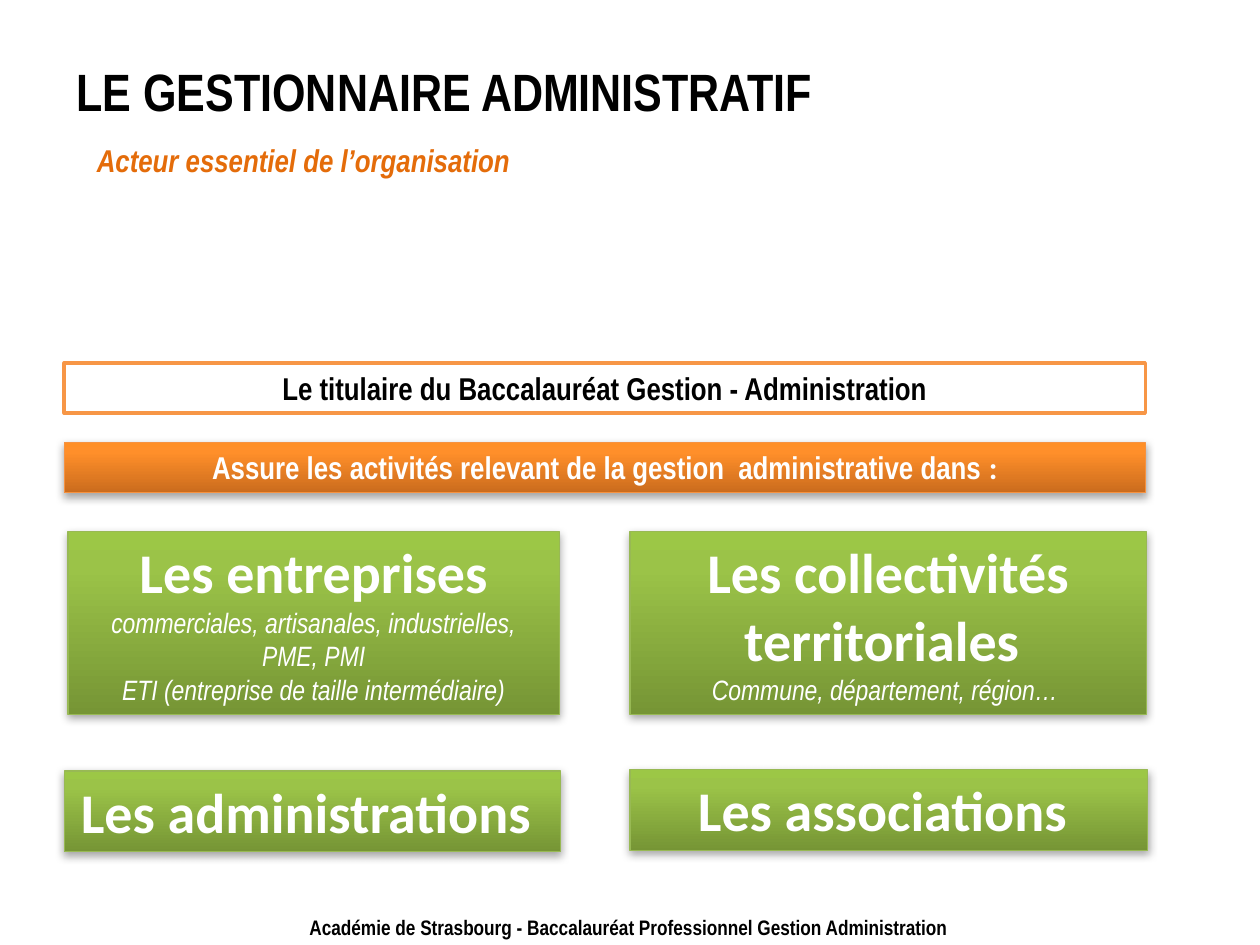
import copy
import dataclasses

import lxml.etree
import pptx
import pptx.dml.color
import pptx.enum.shapes
import pptx.enum.text
import pptx.oxml.ns
import pptx.util

COLS, ROWS = 100, 75
WIDTH, HEIGHT = pptx.util.Inches(10), pptx.util.Inches(7.5)
NARROW, ROUND = "Arial Narrow", "Calibri"
ALIGN = pptx.enum.text.PP_ALIGN
ANCHOR = pptx.enum.text.MSO_ANCHOR
FIT = pptx.enum.text.MSO_AUTO_SIZE


@dataclasses.dataclass(frozen=True)
class Theme:
    black: str = "000000"
    white: str = "FFFFFF"
    accent: str = "E46C0A"
    frame: str = "F79646"
    orange: tuple = ("CB6C1D", "FF8F2A", "FF8F26")
    orange_line: str = "F69240"
    green: tuple = ("769535", "9BC348", "9CC746")
    green_line: str = "98B954"
    stops: tuple = (0, 0.8, 1)
    title: int = 30
    card: int = 32
    body: int = 18
    detail: int = 16
    footer: int = 12


THEME = Theme()


def rgb(value):
    return pptx.dml.color.RGBColor.from_string(value)


def place(box, x, y, w, h):
    left, top = box[:2]
    return (round(WIDTH * (left + x) / COLS), round(HEIGHT * (top + y) / ROWS),
            round(WIDTH * w / COLS), round(HEIGHT * h / ROWS))


def style(size, color, name=NARROW, bold=True, italic=False):
    return {"size": pptx.util.Pt(size), "name": name, "bold": bold,
            "italic": italic, "color": color}


def write(s, paragraphs, align=ALIGN.CENTER, anchor=ANCHOR.TOP,
          fit=FIT.SHAPE_TO_FIT_TEXT):
    tf = s.text_frame
    frame = {"word_wrap": True, "auto_size": fit, "vertical_anchor": anchor}
    for key, value in frame.items():
        setattr(tf, key, value)
    for i, runs in enumerate(paragraphs):
        p = tf.add_paragraph() if i else tf.paragraphs[0]
        p.alignment = align
        for text, look in runs:
            r = p.add_run()
            r.text = text
            for key, value in look.items():
                if key == "color":
                    r.font.color.rgb = rgb(value)
                else:
                    setattr(r.font, key, value)


def add_label(slide, area, paragraphs, **layout):
    write(slide.shapes.add_textbox(*area), paragraphs, **layout)


def add_panel(slide, area, line, width, paragraphs):
    s = slide.shapes.add_shape(pptx.enum.shapes.MSO_SHAPE.RECTANGLE, *area)
    s.shadow.inherit = False
    s.line.color.rgb = rgb(line)
    s.line.width = pptx.util.Pt(width)
    write(s, paragraphs)
    return s


def add_glossy(slide, area, colors, line, paragraphs):
    s = add_panel(slide, area, line, 0.75, paragraphs)
    qn = pptx.oxml.ns.qn
    s.fill.gradient()
    s.fill.gradient_angle = 90
    stops = s._element.spPr.find(".//" + qn("a:gsLst"))
    stops.append(copy.deepcopy(stops[-1]))
    for stop, position, color in zip(s.fill.gradient_stops, THEME.stops, colors):
        stop.position = position
        stop.color.rgb = rgb(color)
    effects = s._element.spPr.find(qn("a:effectLst"))
    shadow = lxml.etree.SubElement(
        effects, qn("a:outerShdw"), blurRad=str(pptx.util.Pt(5)),
        dist=str(pptx.util.Pt(1.8)), dir="5400000", rotWithShape="0")
    color = lxml.etree.SubElement(shadow, qn("a:srgbClr"), val=THEME.black)
    lxml.etree.SubElement(color, qn("a:alpha"), val="35000")


def add_heading(slide, box):
    add_label(slide, place(box, 0, 0, 64.2, 7.1),
              [[("LE GESTIONNAIRE ADMINISTRATIF", style(THEME.title, THEME.black))]],
              align=ALIGN.LEFT, anchor=ANCHOR.MIDDLE, fit=FIT.NONE)
    add_label(slide, place(box, 1.6, 7.1, 47.3, 4),
              [[("Acteur essentiel de l’organisation",
                 style(THEME.body, THEME.accent, italic=True))]], align=ALIGN.LEFT)


def add_banners(slide, box):
    width, height = box[2], 4
    s = add_panel(slide, place(box, 0, 0, width, height), THEME.frame, 2,
                  [[("Le titulaire du Baccalauréat Gestion - Administration",
                     style(THEME.body, THEME.black))]])
    s.fill.solid()
    s.fill.fore_color.rgb = rgb(THEME.white)
    add_glossy(slide, place(box, 0, box[3] - height, width, height),
               THEME.orange, THEME.orange_line,
               [[("Assure les activités relevant de la gestion  administrative dans ",
                  style(THEME.body, THEME.white)),
                 (":", style(THEME.body, THEME.white, ROUND))]])


def add_cards(slide, box):
    head = style(THEME.card, THEME.white, ROUND)
    detail = style(THEME.detail, THEME.white, bold=False, italic=True)
    cards = [
        ((0.3, 0, 39, 14.5), "Les entreprises",
         ["commerciales, artisanales, industrielles, PME, PMI",
          "ETI (entreprise de taille intermédiaire)"]),
        ((44.9, 0, 41, 14.5), "Les collectivités territoriales ",
         ["Commune, département, région… "]),
        ((0, 19, 39.4, 6.4), "Les administrations ", []),
        ((44.9, 18.9, 41.1, 6.4), "Les associations ", []),
    ]
    for area, title, lines in cards:
        add_glossy(slide, place(box, *area), THEME.green, THEME.green_line,
                   [[(title, head)]] + [[(line, detail)] for line in lines])


def add_footer(slide, box):
    add_label(slide, place(box, 0, 0, *box[2:]),
              [[("Académie de Strasbourg - Baccalauréat Professionnel Gestion Administration",
                 style(THEME.footer, THEME.black))]])


def main():
    prs = pptx.Presentation()
    prs.slide_width, prs.slide_height = WIDTH, HEIGHT
    slide = prs.slides.add_slide(prs.slide_layouts[6])
    add_footer(slide, (-0.1, 72.1, 100, 3))
    add_heading(slide, (5.1, 3.6, 64.2, 11.1))
    add_banners(slide, (5.1, 28.8, 85.8, 10.3))
    add_cards(slide, (5.1, 42.2, 86, 25.4))
    prs.save("out.pptx")


if __name__ == "__main__":
    main()
